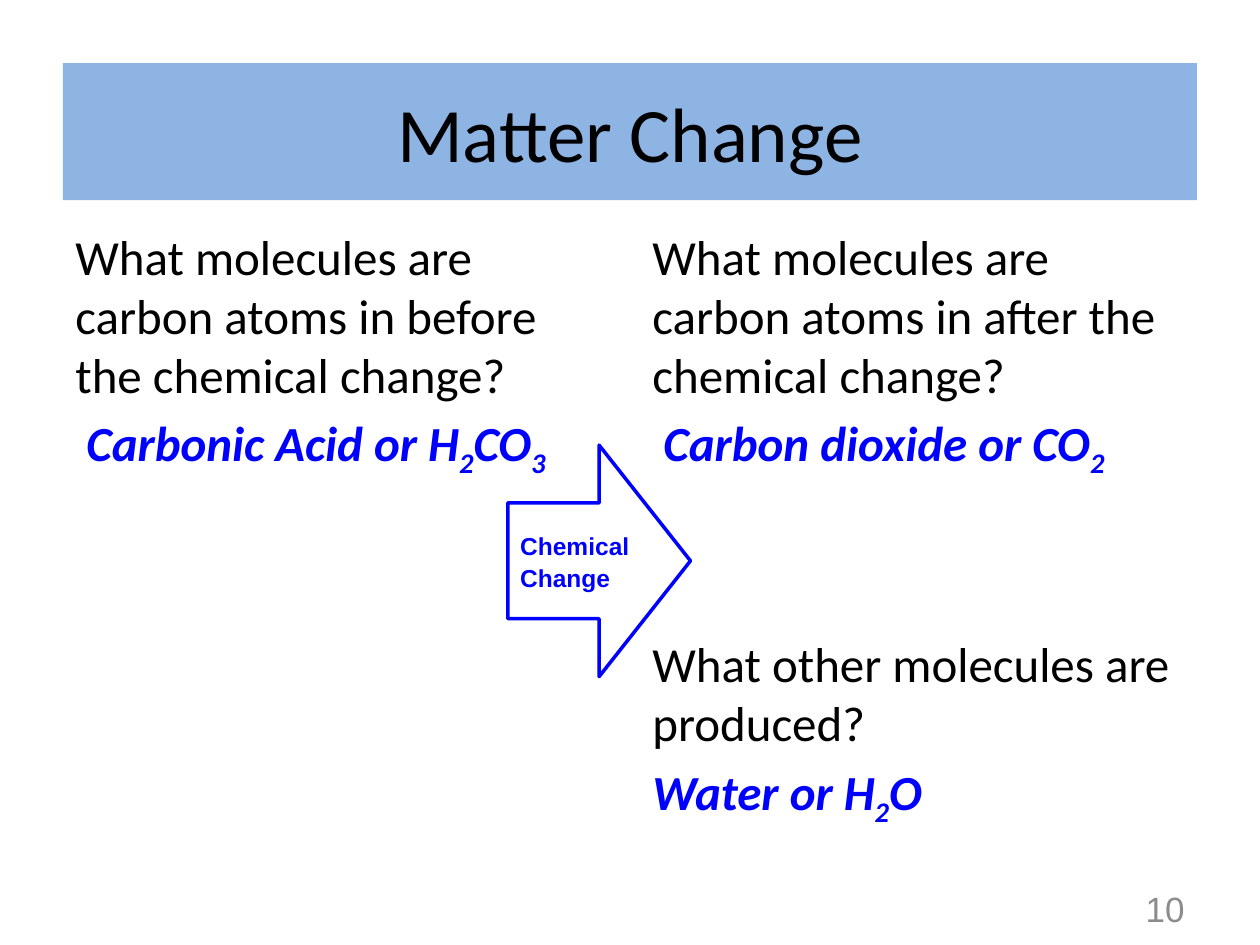
import pptx
import pptx.util
from pptx.dml.color import RGBColor
from pptx.enum.shapes import MSO_SHAPE
from pptx.enum.text import MSO_ANCHOR, PP_ALIGN

BLACK = RGBColor(0x00, 0x00, 0x00)
WHITE = RGBColor(0xFF, 0xFF, 0xFF)
BLUE = RGBColor(0x00, 0x00, 0xFF)
BANNER_BLUE = RGBColor(0x8E, 0xB4, 0xE3)
GREY = RGBColor(0x8C, 0x8C, 0x8C)

WIDTH, HEIGHT = pptx.util.Inches(10), pptx.util.Inches(7.5)
MARGIN = 0.05
COLUMN_WIDTH = 0.442
COLUMN_LEFTS = (MARGIN, 1 - MARGIN - COLUMN_WIDTH)
BODY_TOP, BODY_HEIGHT = 0.233, 0.66
BODY_SIZE = 28
PARAGRAPH_GAP = 0.2 * BODY_SIZE
SECTION_GAP = 88
ANSWER_INDENT = 6.3


def area(left, top, width, height):
    """Turn shares of the slide's size into lengths."""
    return (round(left * WIDTH), round(top * HEIGHT),
            round(width * WIDTH), round(height * HEIGHT))


def add_text(paragraph, text, size=BODY_SIZE, font="Calibri", color=BLACK,
             bold=False, italic=False, align=PP_ALIGN.LEFT,
             before=0, line_spacing=1.0, indent=0):
    """Fill a paragraph; digits between underscores become subscripts."""
    paragraph.alignment = align
    paragraph.space_before = pptx.util.Pt(before)
    paragraph.line_spacing = line_spacing
    if indent:
        properties = paragraph._p.get_or_add_pPr()
        properties.set("marL", str(pptx.util.Pt(indent)))
        properties.set("indent", "0")
    for index, part in enumerate(text.split("_")):
        if not part:
            continue
        run = paragraph.add_run()
        run.text = part
        run.font.size = pptx.util.Pt(size)
        run.font.name = font
        run.font.color.rgb = color
        run.font.bold = bold
        run.font.italic = italic
        if index % 2:
            run.font._element.set("baseline", "-25000")


def add_text_box(slide, place, anchor=MSO_ANCHOR.TOP):
    frame = slide.shapes.add_textbox(*area(*place)).text_frame
    frame.word_wrap = True
    frame.vertical_anchor = anchor
    return frame


def add_filled_shape(slide, kind, place, fill, line=None):
    shape = slide.shapes.add_shape(kind, *area(*place))
    shape.shadow.inherit = False
    shape.fill.solid()
    shape.fill.fore_color.rgb = fill
    if line is None:
        shape.line.fill.background()
    else:
        shape.line.color.rgb = line
        shape.line.width = pptx.util.Pt(2)
    shape.text_frame.word_wrap = True
    shape.text_frame.vertical_anchor = MSO_ANCHOR.MIDDLE
    return shape.text_frame


def add_column(slide, left, entries):
    """Stack (question, answer, answer indent) entries in one text box."""
    frame = add_text_box(slide, (left, BODY_TOP, COLUMN_WIDTH, BODY_HEIGHT))
    for index, (question, answer, indent) in enumerate(entries):
        paragraph = frame.add_paragraph() if index else frame.paragraphs[0]
        add_text(paragraph, question,
                 before=SECTION_GAP if index else PARAGRAPH_GAP)
        add_text(frame.add_paragraph(), answer, color=BLUE, bold=True,
                 italic=True, before=PARAGRAPH_GAP, indent=indent)


def main():
    presentation = pptx.Presentation()
    presentation.slide_width, presentation.slide_height = WIDTH, HEIGHT
    slide = presentation.slides.add_slide(presentation.slide_layouts[6])

    title = add_filled_shape(slide, MSO_SHAPE.RECTANGLE,
                             (MARGIN, 0.067, 1 - 2 * MARGIN, 0.145), BANNER_BLUE)
    add_text(title.paragraphs[0], "Matter Change", size=44,
             align=PP_ALIGN.CENTER)

    before_change = [
        ("What molecules are carbon atoms in before the chemical change?",
         "Carbonic Acid or H_2_CO_3_", ANSWER_INDENT),
    ]
    after_change = [
        ("What molecules are carbon atoms in after the chemical change?",
         "Carbon dioxide or CO_2_", ANSWER_INDENT),
        ("What other molecules are produced?", "Water or H_2_O", 0),
    ]
    for left, entries in zip(COLUMN_LEFTS, (before_change, after_change)):
        add_column(slide, left, entries)

    page_number = add_text_box(slide, (0.717, 0.935, 0.233, 0.053),
                               MSO_ANCHOR.MIDDLE)
    add_text(page_number.paragraphs[0], "10", size=20, font="Arial",
             color=GREY, align=PP_ALIGN.RIGHT)

    arrow = add_filled_shape(slide, MSO_SHAPE.RIGHT_ARROW,
                             (0.403, 0.471, 0.145, 0.245), WHITE, line=BLUE)
    add_text(arrow.paragraphs[0], "Chemical Change", size=14, font="Arial",
             color=BLUE, bold=True, line_spacing=1.07)

    presentation.save("out.pptx")


if __name__ == "__main__":
    main()
